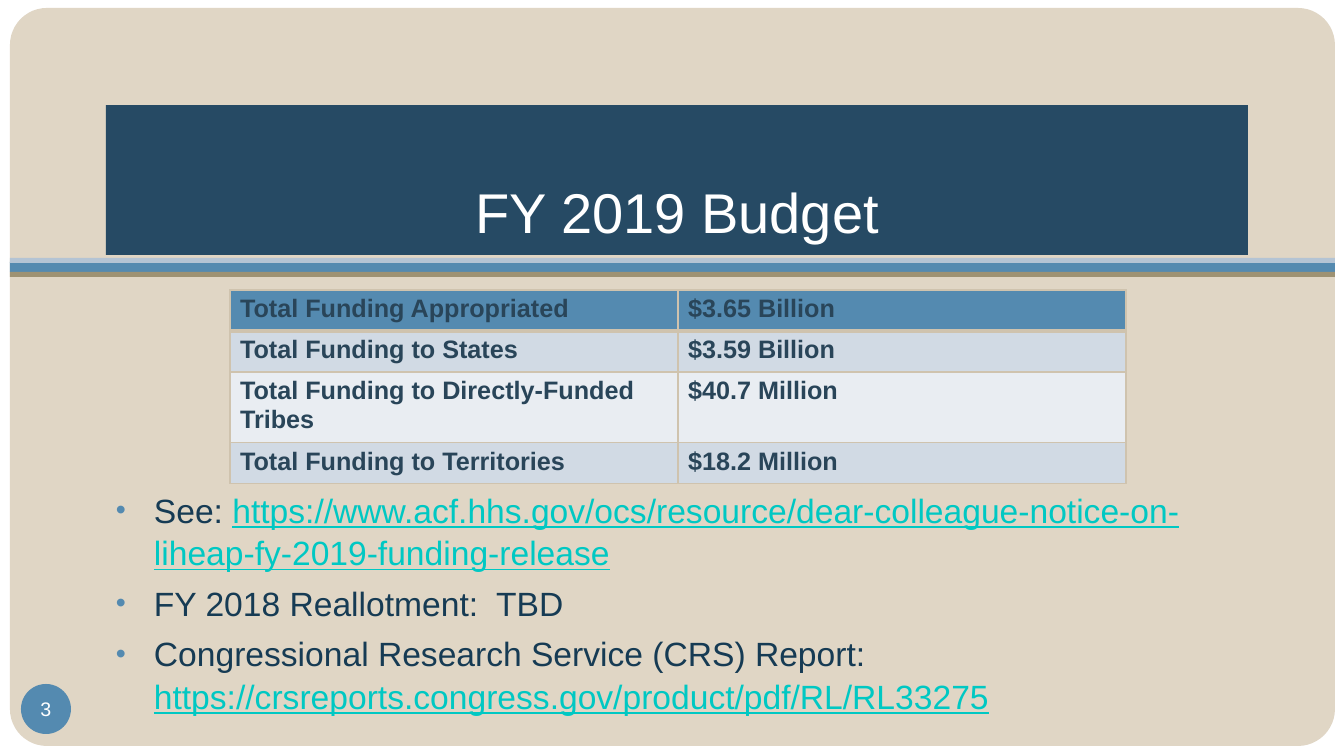
import pptx
import pptx.util
import pptx.dml.color
import pptx.enum.shapes
import pptx.enum.text
import lxml.etree

RGB = pptx.dml.color.RGBColor
SHAPES = pptx.enum.shapes.MSO_SHAPE
ALIGN = pptx.enum.text.PP_ALIGN
ANCHOR = pptx.enum.text.MSO_ANCHOR
PX = 914400 / 100.8

WHITE = RGB(0xFF, 0xFF, 0xFF)
SAND = RGB(0xE0, 0xD6, 0xC5)
BLUE = RGB(0x54, 0x8A, 0xB0)
PALE_BLUE = RGB(0xB4, 0xC4, 0xD4)
KHAKI = RGB(0x9E, 0x92, 0x73)
NAVY = RGB(0x26, 0x4A, 0x64)
BODY_TEXT = RGB(0x16, 0x3B, 0x54)
LINK = RGB(0x00, 0xC8, 0xC3)
TABLE_TEXT = RGB(0x29, 0x45, 0x59)
BAND_DARK = RGB(0xD1, 0xDA, 0xE4)
BAND_LIGHT = RGB(0xE9, 0xED, 0xF2)
BORDER = RGB(0xCF, 0xC3, 0xAE)


def px(*lengths):
    return [round(length * PX) for length in lengths]


def add_text(paragraph, text, size, color, **formats):
    run = paragraph.add_run()
    run.text = text
    run.font.color.rgb = color
    values = {"name": "Arial", "size": pptx.util.Pt(size), **formats}
    for name, value in values.items():
        setattr(run.font, name, value)


presentation = pptx.Presentation()
presentation.slide_width, presentation.slide_height = px(1344, 756)
slide = presentation.slides.add_slide(presentation.slide_layouts[5])
slide.background.fill.solid()
slide.background.fill.fore_color.rgb = WHITE

# Backdrop, stripes and page badge
panels = [
    (SHAPES.ROUNDED_RECTANGLE, (10, 8, 1325, 738), SAND),
    (SHAPES.RECTANGLE, (10, 262, 1325, 10), BLUE),
    (SHAPES.RECTANGLE, (10, 258, 1325, 5), PALE_BLUE),
    (SHAPES.RECTANGLE, (10, 272, 1325, 5), KHAKI),
    (SHAPES.OVAL, (21, 684, 50, 50), BLUE),
]
for kind, place, color in panels:
    shape = slide.shapes.add_shape(kind, *px(*place))
    shape.shadow.inherit = False
    shape.fill.solid()
    shape.fill.fore_color.rgb = color
    shape.line.fill.background()
    if kind == SHAPES.ROUNDED_RECTANGLE:
        shape.adjustments[0] = 0.05

badge_frame = shape.text_frame
badge_format = {"margin_left": 0, "margin_top": 0, "margin_right": 0, "margin_bottom": 0,
                "word_wrap": False, "vertical_anchor": ANCHOR.MIDDLE}
for name, value in badge_format.items():
    setattr(badge_frame, name, value)
badge_frame.paragraphs[0].alignment = ALIGN.CENTER
add_text(badge_frame.paragraphs[0], "3", 14, WHITE)

# Title, brought in front of the backdrop
title = slide.shapes.title
title.element.getparent().append(title.element)
title.left, title.top, title.width, title.height = px(106, 105, 1142, 150)
title.fill.solid()
title.fill.fore_color.rgb = NAVY
title_format = {"vertical_anchor": ANCHOR.BOTTOM, "margin_bottom": px(10)[0],
                "auto_size": pptx.enum.text.MSO_AUTO_SIZE.NONE}
for name, value in title_format.items():
    setattr(title.text_frame, name, value)
title.text_frame.paragraphs[0].alignment = ALIGN.CENTER
add_text(title.text_frame.paragraphs[0], "FY 2019 Budget", 40, WHITE)

# Bulleted notes
notes = [
    [("See: ", False),
     ("https://www.acf.hhs.gov/ocs/resource/dear-colleague-notice-on-liheap-fy-2019-funding-release", True)],
    [("FY 2018 Reallotment:  TBD", False)],
    [("Congressional Research Service (CRS) Report: ", False),
     ("https://crsreports.congress.gov/product/pdf/RL/RL33275", True)],
]
body_frame = slide.shapes.add_textbox(*px(106, 483, 1142, 240)).text_frame
body_frame.word_wrap = True
for index, note in enumerate(notes):
    paragraph = body_frame.add_paragraph() if index else body_frame.paragraphs[0]
    paragraph.line_spacing = 1.05
    paragraph.space_before = pptx.util.Pt(5.8 if index else 0)
    properties = paragraph._p.get_or_add_pPr()
    indent = px(38)[0]
    properties.set("marL", str(indent))
    properties.set("indent", str(-indent))
    bullet_color = pptx.oxml.xmlchemy.OxmlElement("a:buClr")
    lxml.etree.SubElement(bullet_color, pptx.oxml.ns.qn("a:srgbClr"), val=str(BLUE))
    properties.append(bullet_color)
    for tag, name, value in [("a:buSzPct", "val", "85000"), ("a:buFont", "typeface", "Arial"),
                             ("a:buChar", "char", "•")]:
        lxml.etree.SubElement(properties, pptx.oxml.ns.qn(tag)).set(name, value)
    for text, is_link in note:
        add_text(paragraph, text, 24, LINK if is_link else BODY_TEXT, underline=is_link)

# Funding table
funding = [
    ("Total Funding Appropriated", "$3.65 Billion", 41, BLUE),
    ("Total Funding to States", "$3.59 Billion", 41, BAND_DARK),
    ("Total Funding to Directly-Funded Tribes", "$40.7 Million", 67, BAND_LIGHT),
    ("Total Funding to Territories", "$18.2 Million", 41, BAND_DARK),
]
table = slide.shapes.add_table(len(funding), 2, *px(230, 290, 896, 190)).table
table.horz_banding = False
for row, (label, amount, height, color) in enumerate(funding):
    table.rows[row].height = px(height)[0]
    for column, text in enumerate((label, amount)):
        cell = table.cell(row, column)
        cell.fill.solid()
        cell.fill.fore_color.rgb = color
        add_text(cell.text_frame.paragraphs[0], text, 18, TABLE_TEXT, bold=True)
        cell_properties = cell._tc.get_or_add_tcPr()
        for position, side in enumerate("LRTB"):
            heavy = (row, side) in [(0, "B"), (1, "T")]
            border = pptx.oxml.xmlchemy.OxmlElement("a:ln" + side)
            border.set("w", str(pptx.util.Pt(3 if heavy else 1)))
            border_fill = lxml.etree.SubElement(border, pptx.oxml.ns.qn("a:solidFill"))
            lxml.etree.SubElement(border_fill, pptx.oxml.ns.qn("a:srgbClr"), val=str(BORDER))
            cell_properties.insert(position, border)

presentation.save("out.pptx")
